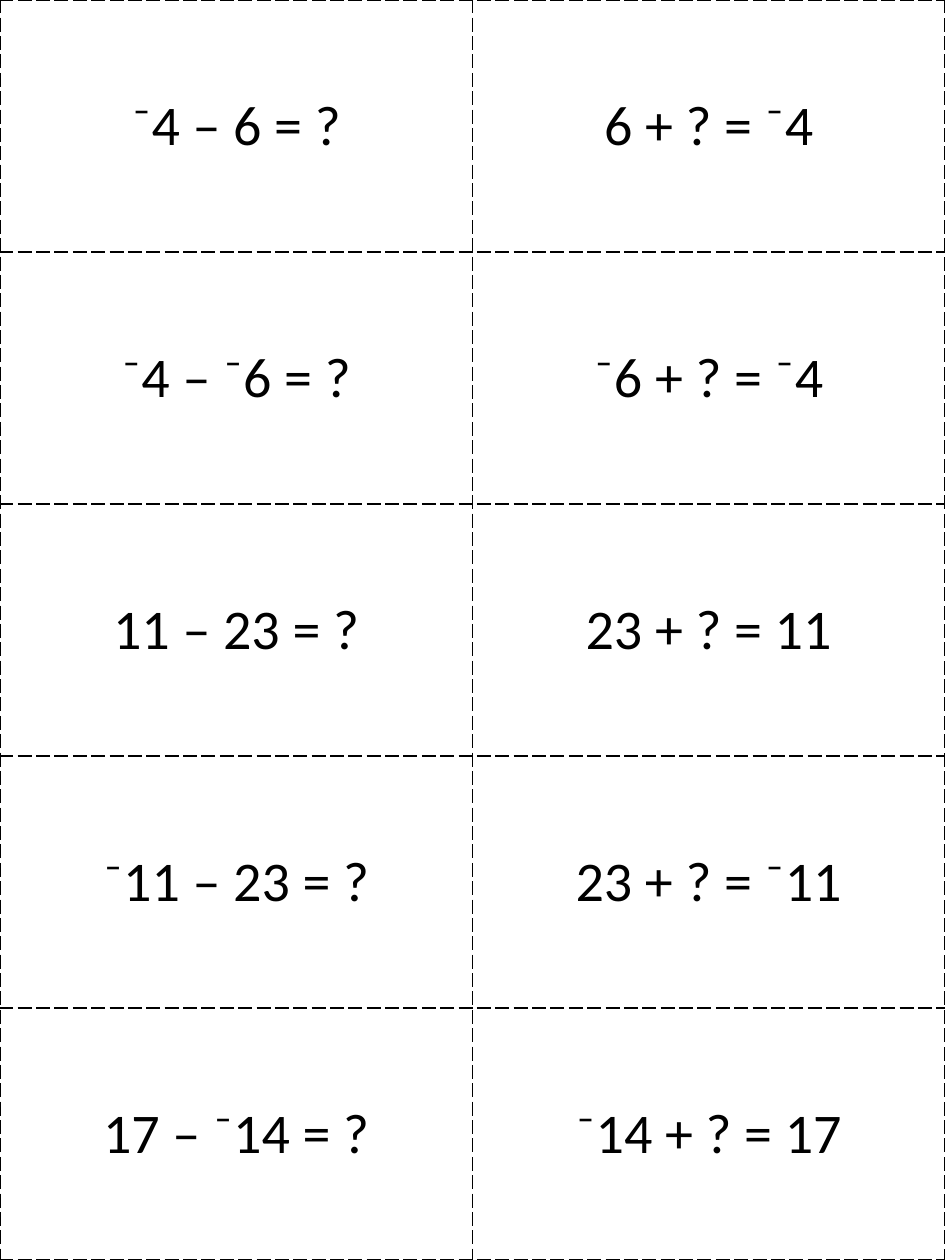
from typing import NamedTuple

from lxml.etree import SubElement
from pptx import Presentation
from pptx.dml.color import RGBColor
from pptx.enum.text import MSO_ANCHOR, PP_ALIGN
from pptx.oxml.ns import qn
from pptx.util import Emu, Pt

EMU_PER_PX = 9144  # 100 px to the inch
CARD_WIDTH, CARD_HEIGHT = 375, 200
INK = "000000"
BORDER_SIDES = ("a:lnL", "a:lnR", "a:lnT", "a:lnB")


class CardPair(NamedTuple):
    subtraction: str
    addition: str


CARD_PAIRS = [
    CardPair("⁻4 – 6 = ?", "6 + ? = ⁻4"),
    CardPair("⁻4 – ⁻6 = ?", "⁻6 + ? = ⁻4"),
    CardPair("11 – 23 = ?", "23 + ? = 11"),
    CardPair("⁻11 – 23 = ?", "23 + ? = ⁻11"),
    CardPair("17 – ⁻14 = ?", "⁻14 + ? = 17"),
]


def px(length: int) -> Emu:
    return Emu(length * EMU_PER_PX)


def color(hex_value: str) -> RGBColor:
    return RGBColor.from_string(hex_value)


def add_cut_lines(cell) -> None:
    """Give all four sides of a cell a dashed border."""
    properties = cell._tc.get_or_add_tcPr()
    for side in BORDER_SIDES:
        line = SubElement(properties, qn(side), w=str(Pt(1)))
        fill = SubElement(line, qn("a:solidFill"))
        SubElement(fill, qn("a:srgbClr"), val=INK)
        SubElement(line, qn("a:prstDash"), val="lgDash")


def fill_card(cell, equation: str) -> None:
    cell.vertical_anchor = MSO_ANCHOR.MIDDLE
    paragraph = cell.text_frame.paragraphs[0]
    paragraph.alignment = PP_ALIGN.CENTER
    run = paragraph.add_run()
    run.text = equation
    run.font.name = "Calibri"
    run.font.size = Pt(32)
    run.font.bold = False
    run.font.color.rgb = color(INK)
    # Borders must come before the fill in the cell properties
    add_cut_lines(cell)
    cell.fill.background()


def add_card_table(slide, pairs: list[CardPair]) -> None:
    row_count, column_count = len(pairs), len(CardPair._fields)
    table = slide.shapes.add_table(
        row_count, column_count, px(0), px(0),
        px(column_count * CARD_WIDTH), px(row_count * CARD_HEIGHT),
    ).table
    table.first_row = False
    table.horz_banding = False
    for row_index, pair in enumerate(pairs):
        for column_index, equation in enumerate(pair):
            fill_card(table.cell(row_index, column_index), equation)


def main() -> None:
    presentation = Presentation()
    presentation.slide_width = px(2 * CARD_WIDTH)
    presentation.slide_height = px(len(CARD_PAIRS) * CARD_HEIGHT)

    # Blank layout: the cards cover the whole page
    slide = presentation.slides.add_slide(presentation.slide_layouts[6])
    add_card_table(slide, CARD_PAIRS)
    presentation.save("out.pptx")


if __name__ == "__main__":
    main()
